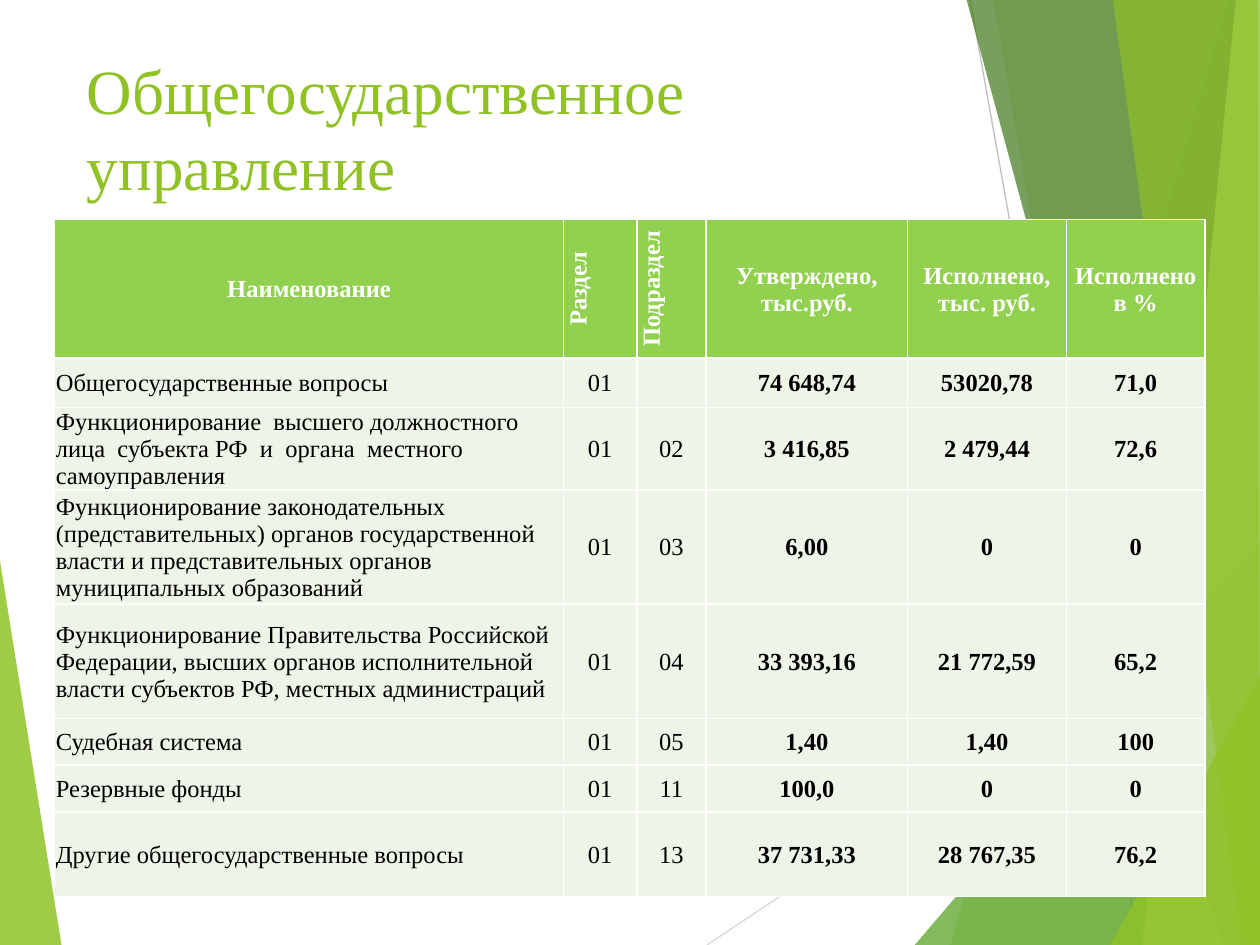
from typing import NamedTuple

from lxml import etree
from pptx import Presentation
from pptx.dml.color import RGBColor
from pptx.enum.shapes import MSO_CONNECTOR
from pptx.enum.text import MSO_ANCHOR, MSO_AUTO_SIZE, PP_ALIGN
from pptx.oxml.ns import qn
from pptx.util import Pt

LEFT, CENTER = PP_ALIGN.LEFT, PP_ALIGN.CENTER
MIDDLE = MSO_ANCHOR.MIDDLE
NO_AUTOFIT = MSO_AUTO_SIZE.NONE
STRAIGHT = MSO_CONNECTOR.STRAIGHT

FONT = "Times New Roman"
COLORS = {
    "lime": "90C226", "leaf": "54A021", "forest": "3F7819", "pale": "C0E474",
    "header": "92D050", "body": "EEF4E8", "white": "FFFFFF", "black": "000000",
    "light_gray": "D9D9D9", "gray": "BFBFBF",
}


class Facet(NamedTuple):
    color: str
    opacity: int
    points: list[tuple[float, float]]


class Ray(NamedTuple):
    color: str
    start: tuple[float, float]
    end: tuple[float, float]


# Background decoration, back to front
RIGHT, BOTTOM = 720.7, 540
DECORATION = [
    Facet("lime", 85, [(-0.7, 316), (35.3, 540.7), (-0.7, BOTTOM)]),
    Ray("light_gray", (404, BOTTOM), (RIGHT, 329)),
    Ray("gray", (554.4, 0), (651, BOTTOM)),
    Facet("lime", 30, [(702, 0), (543, BOTTOM), (721.4, 540.7), (RIGHT, 0.7)]),
    Facet("lime", 20, [(567.4, -0.7), (661.7, BOTTOM), (RIGHT, BOTTOM), (RIGHT, -0.7)]),
    Facet("leaf", 72, [(522.7, BOTTOM), (720, 309), (RIGHT, BOTTOM)]),
    Facet("forest", 70, [(552.2, -0.7), (698.4, BOTTOM), (RIGHT, BOTTOM), (RIGHT, -0.7)]),
    Facet("pale", 70, [(706.3, -0.7), (653, BOTTOM), (RIGHT, BOTTOM), (720, -0.7)]),
    Facet("lime", 65, [(635.8, -0.7), (710, BOTTOM), (720, BOTTOM), (718.6, -0.7)]),
    Facet("lime", 80, [(634.3, BOTTOM), (RIGHT, 385.2), (RIGHT, BOTTOM)]),
]

COLUMN_WIDTHS = [290.9, 41.8, 39.6, 115.2, 90.7, 79.2]
ROW_HEIGHTS = [79.2, 28.1, 46.8, 65.3, 65.3, 26.8, 26.8, 48.3]
ROTATED_HEADERS = ("Раздел", "Подраздел")
FIRST_BOLD_COLUMN = 3
ROWS = [
    ["Наименование", *ROTATED_HEADERS, "Утверждено,\nтыс.руб.",
     "Исполнено,\nтыс. руб.", "Исполнено в %"],
    ["Общегосударственные вопросы", "01", "", "74 648,74", "53020,78", "71,0"],
    ["Функционирование  высшего должностного  лица  субъекта РФ  и  органа  "
     "местного  самоуправления", "01", "02", "3 416,85", "2 479,44", "72,6"],
    ["Функционирование законодательных (представительных) органов государственной "
     "власти и представительных органов муниципальных образований",
     "01", "03", "6,00", "0", "0"],
    ["Функционирование Правительства Российской Федерации, высших органов "
     "исполнительной власти субъектов РФ, местных администраций",
     "01", "04", "33 393,16", "21 772,59", "65,2"],
    ["Судебная система", "01", "05", "1,40", "1,40", "100"],
    ["Резервные фонды", "01", "11", "100,0", "0", "0"],
    ["Другие общегосударственные вопросы", "01", "13", "37 731,33", "28 767,35", "76,2"],
]


def rgb(name: str) -> RGBColor:
    return RGBColor.from_string(COLORS[name])


def write_text(frame, text: str, *, size: float, color: str,
               bold: bool = False, align=LEFT) -> None:
    """Fill a text frame, one paragraph per line of text."""
    frame.text = text
    for para in frame.paragraphs:
        para.alignment = align
        for span in para.runs:
            span.font.name = FONT
            span.font.size = Pt(size)
            span.font.bold = bold
            span.font.color.rgb = rgb(color)


def draw_facet(slide, facet: Facet) -> None:
    first, *others = [(Pt(x), Pt(y)) for x, y in facet.points]
    builder = slide.shapes.build_freeform(*first)
    builder.add_line_segments(others, close=True)
    shape = builder.convert_to_shape()
    shape.shadow.inherit = False
    shape.line.fill.background()
    shape.fill.solid()
    shape.fill.fore_color.rgb = rgb(facet.color)
    color = shape._element.spPr.find(qn("a:solidFill"))[0]
    etree.SubElement(color, qn("a:alpha"), val=str(facet.opacity * 1000))


def draw_ray(slide, ray: Ray) -> None:
    ends = [Pt(value) for value in (*ray.start, *ray.end)]
    line = slide.shapes.add_connector(STRAIGHT, *ends)
    line.line.color.rgb = rgb(ray.color)
    line.line.width = Pt(0.75)
    etree.SubElement(line._element.spPr, qn("a:effectLst"))


def draw_title(slide, text: str) -> None:
    title = slide.shapes.title
    slide.shapes._spTree.append(title._element)  # in front of the decoration
    title.left, title.top = Pt(42.5), Pt(20.9)
    title.width, title.height = Pt(499.7), Pt(103.7)
    frame = title.text_frame
    frame.word_wrap = True
    frame.auto_size = NO_AUTOFIT
    frame.vertical_anchor = MIDDLE
    write_text(frame, text, size=36, color="lime")


def add_borders(cell) -> None:
    properties = cell._tc.get_or_add_tcPr()
    for side in ("lnL", "lnR", "lnT", "lnB"):
        border = etree.SubElement(properties, qn(f"a:{side}"), w=str(Pt(1)))
        fill = etree.SubElement(border, qn("a:solidFill"))
        etree.SubElement(fill, qn("a:srgbClr"), val=COLORS["white"])


def format_cell(cell, text: str, row: int, column: int) -> None:
    is_header = row == 0
    cell.margin_left = cell.margin_right = cell.margin_top = Pt(0.7)
    cell.margin_bottom = 0
    cell.vertical_anchor = MIDDLE
    add_borders(cell)
    cell.fill.solid()
    cell.fill.fore_color.rgb = rgb("header" if is_header else "body")
    if text in ROTATED_HEADERS:
        cell._tc.get_or_add_tcPr().set("vert", "vert270")
    write_text(cell.text_frame, text, size=14,
               color="white" if is_header else "black",
               bold=is_header or column >= FIRST_BOLD_COLUMN,
               align=CENTER if is_header or column else LEFT)


def draw_budget_table(slide) -> None:
    frame = slide.shapes.add_table(
        len(ROWS), len(COLUMN_WIDTHS), Pt(31.2), Pt(125.5),
        Pt(sum(COLUMN_WIDTHS)), Pt(sum(ROW_HEIGHTS)))
    table = frame.table
    table.first_row = table.horz_banding = False
    for column, width in zip(table.columns, COLUMN_WIDTHS):
        column.width = Pt(width)
    for row, height in zip(table.rows, ROW_HEIGHTS):
        row.height = Pt(height)
    for row, texts in enumerate(ROWS):
        for column, text in enumerate(texts):
            format_cell(table.cell(row, column), text, row, column)


def main() -> None:
    deck = Presentation()
    deck.slide_width, deck.slide_height = Pt(720), Pt(540)
    page = deck.slides.add_slide(deck.slide_layouts.get_by_name("Title Only"))
    for part in DECORATION:
        if isinstance(part, Facet):
            draw_facet(page, part)
        else:
            draw_ray(page, part)
    draw_title(page, "Общегосударственное управление")
    draw_budget_table(page)
    deck.save("out.pptx")


if __name__ == "__main__":
    main()
